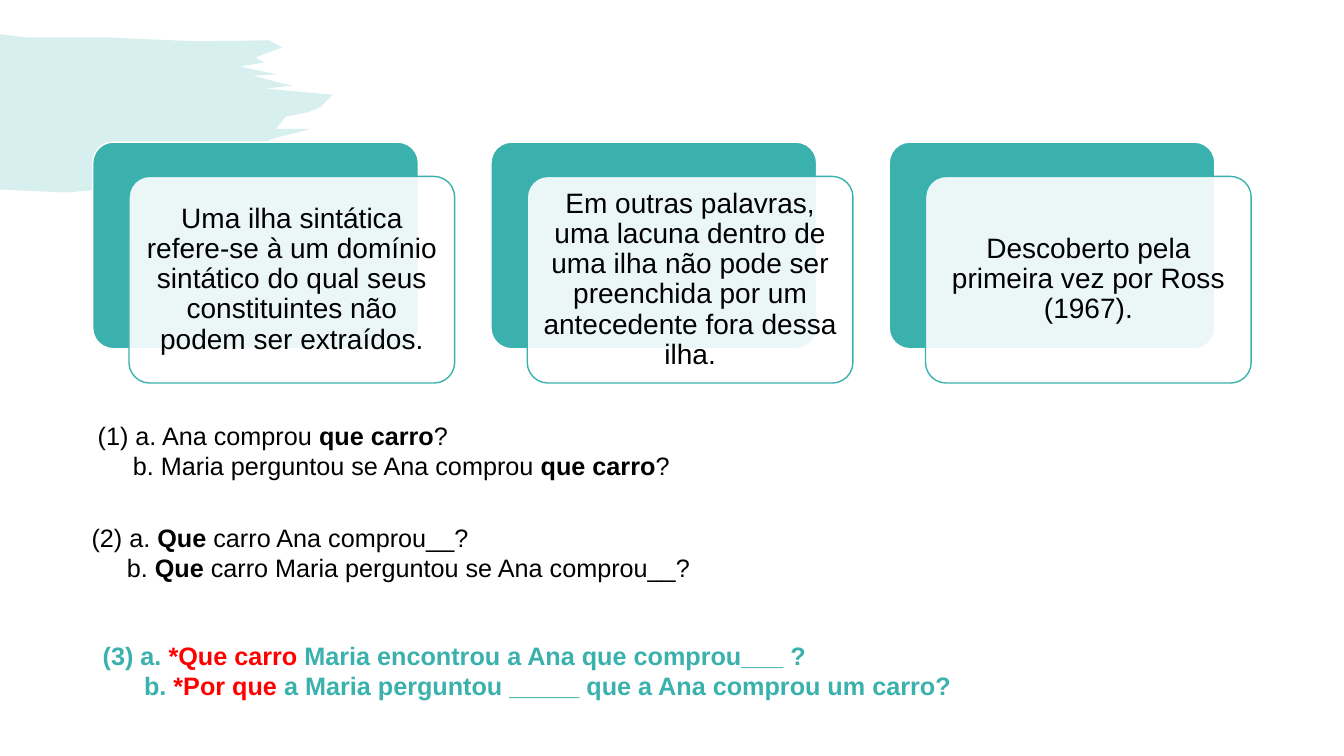
from lxml.etree import SubElement
from pptx import Presentation
from pptx.dml.color import RGBColor
from pptx.enum.shapes import MSO_SHAPE
from pptx.enum.text import MSO_ANCHOR, PP_ALIGN
from pptx.oxml.ns import qn
from pptx.util import Inches, Pt

TEAL, RED, BLACK, WHITE = "3BB1AE", "FF0000", "000000", "FFFFFF"

BRUSH_OUTLINE = [
    (0, 0.34), (0.25, 0.37), (1.02, 0.37), (1.94, 0.41), (2.67, 0.4),
    (2.8, 0.47), (2.53, 0.57), (2.62, 0.62), (2.38, 0.66), (2.75, 0.74),
    (2.51, 0.75), (2.73, 0.81), (2.9, 0.85), (2.63, 0.88), (3.3, 0.94),
    (3.18, 1.06), (3.07, 1.11), (2.83, 1.16), (2.74, 1.28), (3.08, 1.28),
    (2.69, 1.38), (2.52, 1.48), (1.97, 1.72), (1.02, 1.88), (0.65, 1.91),
    (0, 1.88),
]

CARDS = [
    "Uma ilha sintática refere-se à um domínio sintático do qual seus "
    "constituintes não podem ser extraídos.",
    "Em outras palavras, uma lacuna dentro de uma ilha não pode ser "
    "preenchida por um antecedente fora dessa ilha.",
    "Descoberto pela primeira vez por Ross (1967).",
]

PLAIN, BOLD = (BLACK, False), (BLACK, True)
TEAL_BOLD, RED_BOLD = (TEAL, True), (RED, True)

# Box (left, top, width, height), then lines of (indent, runs).
EXAMPLES = [
    ((0.87, 4.12, 11.71, 1.01), [
        (0, [("(1) a. Ana comprou ", PLAIN), ("que carro", BOLD), ("?", PLAIN)]),
        (0.35, [("b. Maria perguntou se Ana comprou ", PLAIN),
                ("que carro", BOLD), ("?", PLAIN)]),
    ]),
    ((0.75, 5.13, 11.84, 1.01), [
        (0.06, [("(2) a. ", PLAIN), ("Que", BOLD),
                (" carro Ana comprou__?", PLAIN)]),
        (0.41, [("b. ", PLAIN), ("Que", BOLD),
                (" carro Maria perguntou se Ana comprou__?", PLAIN)]),
    ]),
    ((0.92, 6.3, 8.78, 0.71), [
        (0, [("(3) a. ", TEAL_BOLD), ("*Que carro ", RED_BOLD),
             ("Maria encontrou a Ana que comprou___ ?", TEAL_BOLD)]),
        (0.41, [("b. ", TEAL_BOLD), ("*Por que ", RED_BOLD),
                ("a Maria perguntou _____ que a Ana comprou um carro?",
                 TEAL_BOLD)]),
    ]),
]


def color(value):
    return RGBColor.from_string(value)


class SlideWriter:
    font = "Arial"

    def __init__(self, slide):
        self.slide = slide

    def paint(self, shape, fill, opacity, line=None):
        shape.shadow.inherit = False
        shape.fill.solid()
        shape.fill.fore_color.rgb = color(fill)
        if opacity < 100:
            fill_color = shape.fill._xPr.find(".//" + qn("a:srgbClr"))
            SubElement(fill_color, qn("a:alpha"), val=str(opacity * 1000))
        if line:
            shape.line.color.rgb = color(line)
            shape.line.width = Pt(1)
        else:
            shape.line.fill.background()

    def brush(self):
        outline = [(Inches(x), Inches(y)) for x, y in BRUSH_OUTLINE]
        builder = self.slide.shapes.build_freeform(*outline[0])
        builder.add_line_segments(outline[1:], close=True)
        self.paint(builder.convert_to_shape(), TEAL, 20)

    def panel(self, box, fill, line, opacity=100):
        shape = self.slide.shapes.add_shape(
            MSO_SHAPE.ROUNDED_RECTANGLE, *map(Inches, box))
        shape.adjustments[0] = 0.1
        self.paint(shape, fill, opacity, line)

    def text(self, box, lines, size):
        """Add a text box and return its frame."""
        frame = self.slide.shapes.add_textbox(*map(Inches, box)).text_frame
        frame.word_wrap = True
        for index, (indent, runs) in enumerate(lines):
            paragraph = frame.add_paragraph() if index else frame.paragraphs[0]
            if indent:
                paragraph._p.get_or_add_pPr().set("marL", str(Inches(indent)))
            for content, (text_color, bold) in runs:
                run = paragraph.add_run()
                run.text = content
                run.font.name = self.font
                run.font.size = Pt(size)
                run.font.bold = bold
                run.font.color.rgb = color(text_color)
        return frame

    def card(self, left, content):
        self.panel((left, 1.41, 3.23, 2.05), TEAL, WHITE)
        self.panel((left + 0.36, 1.75, 3.23, 2.05), WHITE, TEAL, 90)
        frame = self.text((left + 0.42, 1.81, 3.11, 1.93),
                          [(0, [(content, PLAIN)])], 20)
        frame.vertical_anchor = MSO_ANCHOR.MIDDLE
        frame.margin_left = frame.margin_right = Inches(0.08)
        frame.margin_top = frame.margin_bottom = Inches(0.08)
        frame.paragraphs[0].alignment = PP_ALIGN.CENTER
        frame.paragraphs[0].line_spacing = 0.9


def main():
    presentation = Presentation()
    presentation.slide_width = Inches(13.33)
    presentation.slide_height = Inches(7.5)
    writer = SlideWriter(
        presentation.slides.add_slide(presentation.slide_layouts[6]))
    writer.brush()
    for index, content in enumerate(CARDS):
        writer.card(0.92 + 3.95 * index, content)
    for box, lines in EXAMPLES:
        writer.text(box, lines, 18)
    presentation.save("out.pptx")


if __name__ == "__main__":
    main()
